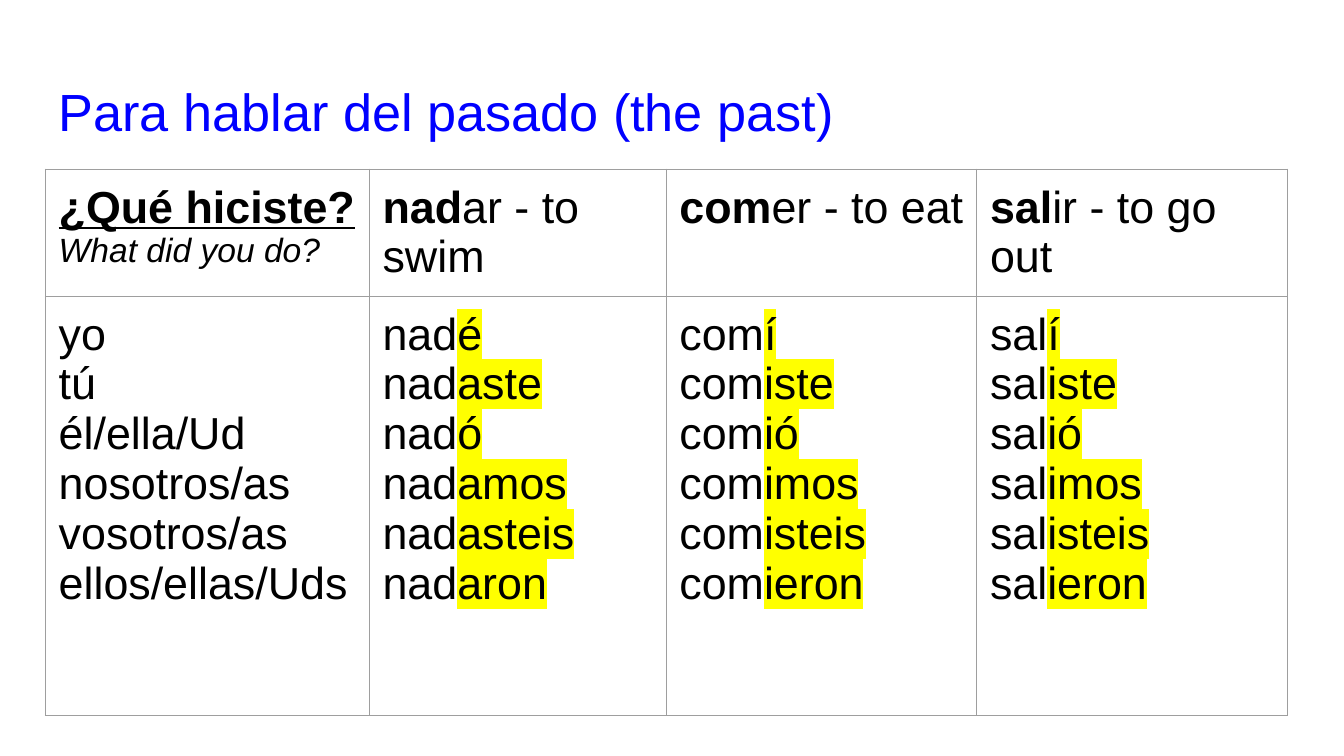
import pptx
import pptx.dml.color
import pptx.enum.text
import pptx.oxml.ns
import pptx.util
from lxml import etree
from pptx.util import Cm

BLACK = pptx.dml.color.RGBColor(0x00, 0x00, 0x00)
BLUE = pptx.dml.color.RGBColor(0x00, 0x00, 0xFF)
YELLOW = pptx.dml.color.RGBColor(0xFF, 0xFF, 0x00)
GREY = pptx.dml.color.RGBColor(0x9E, 0x9E, 0x9E)

FONT = "Arial"
INSET = Cm(0.25)
LEFT = Cm(0.86)
COLUMN_WIDTHS = [6.12, 5.61, 5.87, 5.87]
ROW_HEIGHTS = [2.4, 7.92]

PRONOUNS = ["yo", "tú", "él/ella/Ud", "nosotros/as", "vosotros/as", "ellos/ellas/Uds"]
AR_ENDINGS = ["é", "aste", "ó", "amos", "asteis", "aron"]
IR_ENDINGS = ["í", "iste", "ió", "imos", "isteis", "ieron"]
VERBS = [
    ("nad", "ar - to swim", AR_ENDINGS),
    ("com", "er - to eat", IR_ENDINGS),
    ("sal", "ir - to go out", IR_ENDINGS),
]


def style_paragraph(paragraph, size=24, color=BLACK):
    paragraph.font.name = FONT
    paragraph.font.size = pptx.util.Pt(size)
    paragraph.font.color.rgb = color


def add_run(paragraph, text):
    run = paragraph.add_run()
    run.text = text
    return run


def add_color(parent, tag, color):
    holder = etree.SubElement(parent, pptx.oxml.ns.qn(tag))
    etree.SubElement(holder, pptx.oxml.ns.qn("a:srgbClr"), val=str(color))


def add_highlighted(paragraph, text):
    run = add_run(paragraph, text)
    add_color(run.font._element, "a:highlight", YELLOW)


def format_cell(cell):
    cell.margin_left = cell.margin_right = INSET
    cell.margin_top = cell.margin_bottom = INSET
    properties = cell._tc.get_or_add_tcPr()
    for side in ("a:lnL", "a:lnR", "a:lnT", "a:lnB"):
        border = etree.SubElement(
            properties, pptx.oxml.ns.qn(side), w=str(pptx.util.Pt(0.75))
        )
        add_color(border, "a:solidFill", GREY)
    cell.fill.background()


def add_title(slide):
    title = slide.shapes.title
    title.left, title.top = LEFT, Cm(1.25)
    title.width, title.height = Cm(23.67), Cm(1.6)
    frame = title.text_frame
    frame.margin_left = frame.margin_right = INSET
    frame.margin_top = frame.margin_bottom = INSET
    frame.vertical_anchor = pptx.enum.text.MSO_ANCHOR.TOP
    frame.text = "Para hablar del pasado (the past)"
    heading = frame.paragraphs[0]
    heading.alignment = pptx.enum.text.PP_ALIGN.LEFT
    heading.line_spacing = 1.0
    heading.space_before = pptx.util.Pt(0)
    style_paragraph(heading, 28, BLUE)


def fill_question(cell):
    question = cell.text_frame.paragraphs[0]
    add_run(question, "¿Qué hiciste?")
    style_paragraph(question)
    question.font.bold = True
    question.font.underline = True
    translation = cell.text_frame.add_paragraph()
    add_run(translation, "What did you do?")
    style_paragraph(translation, 18)
    translation.font.italic = True


def fill_pronouns(cell):
    cell.text_frame.text = "\n".join(PRONOUNS)
    for pronoun in cell.text_frame.paragraphs:
        style_paragraph(pronoun)


def fill_infinitive(cell, stem, rest):
    infinitive = cell.text_frame.paragraphs[0]
    style_paragraph(infinitive)
    add_run(infinitive, stem).font.bold = True
    add_run(infinitive, rest)


def fill_conjugation(cell, stem, endings):
    forms = cell.text_frame.paragraphs[0]
    style_paragraph(forms)
    for index, ending in enumerate(endings):
        if index:
            forms.add_line_break()
        add_run(forms, stem)
        add_highlighted(forms, ending)


def add_verb_table(slide):
    verb_table = slide.shapes.add_table(
        len(ROW_HEIGHTS), len(COLUMN_WIDTHS), LEFT, Cm(3.2),
        Cm(sum(COLUMN_WIDTHS)), Cm(sum(ROW_HEIGHTS)),
    ).table
    verb_table.first_row = False
    verb_table.horz_banding = False
    for column, width in zip(verb_table.columns, COLUMN_WIDTHS):
        column.width = Cm(width)
    for row, height in zip(verb_table.rows, ROW_HEIGHTS):
        row.height = Cm(height)
    for cell in verb_table.iter_cells():
        format_cell(cell)

    fill_question(verb_table.cell(0, 0))
    fill_pronouns(verb_table.cell(1, 0))
    for column, (stem, rest, endings) in enumerate(VERBS, start=1):
        fill_infinitive(verb_table.cell(0, column), stem, rest)
        fill_conjugation(verb_table.cell(1, column), stem, endings)


def main():
    presentation = pptx.Presentation()
    presentation.slide_width = Cm(25.4)
    presentation.slide_height = Cm(14.29)
    # Title-only layout
    slide = presentation.slides.add_slide(presentation.slide_layouts[5])
    add_title(slide)
    # Past tense endings, one verb per column
    add_verb_table(slide)
    presentation.save("out.pptx")


if __name__ == "__main__":
    main()
